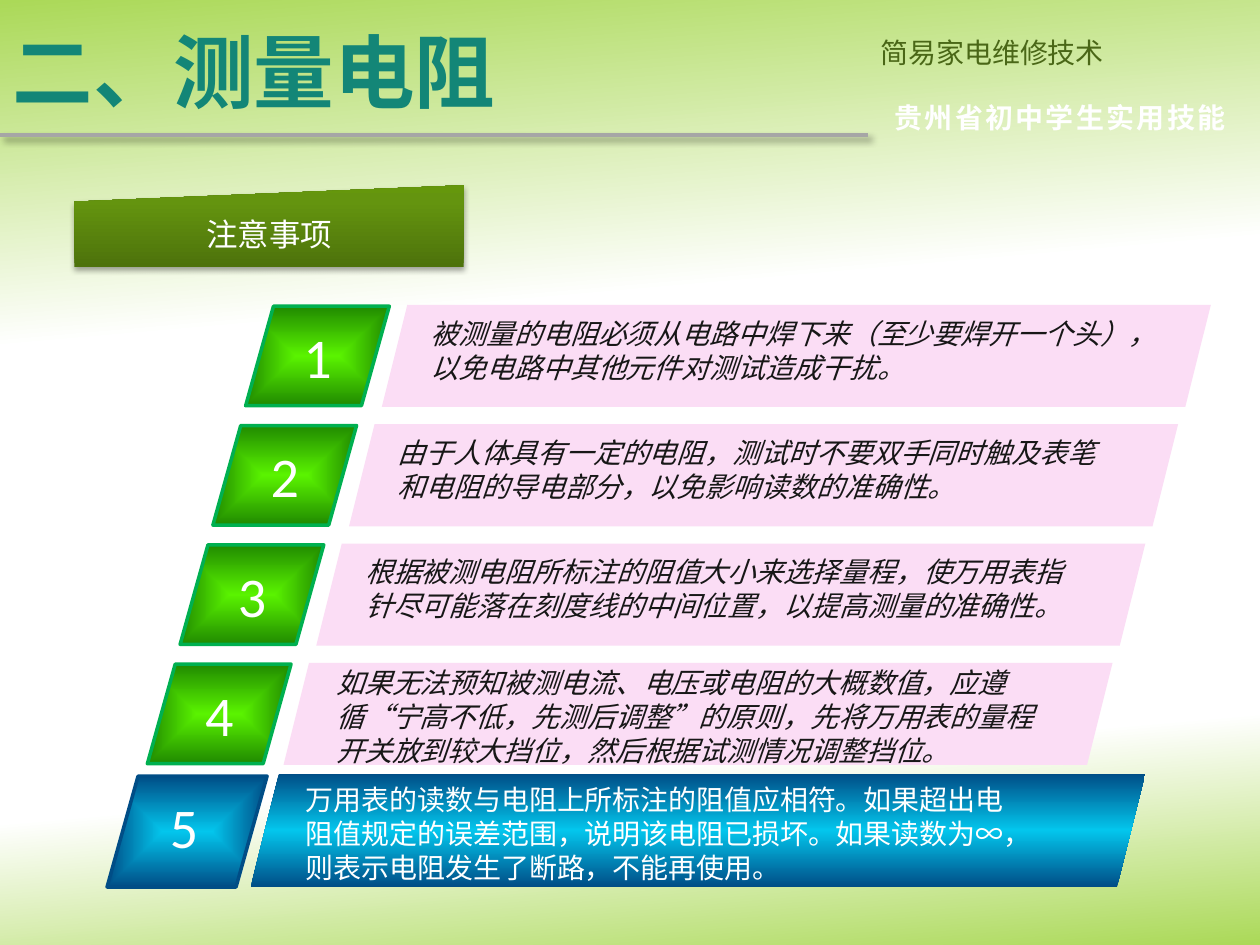
from lxml.etree import SubElement
from pptx import Presentation
from pptx.dml.color import RGBColor
from pptx.enum.shapes import MSO_CONNECTOR as Connector, MSO_SHAPE as Shape
from pptx.enum.text import MSO_ANCHOR as Anchor, PP_ALIGN as Align
from pptx.oxml.ns import qn
from pptx.util import Inches, Pt

CJK = "Noto Sans CJK SC"
GREEN = [(0, "5AF300"), (100, "208A00")]
BLUE = [(0, "03C6ED"), (100, "004D86")]
BLUE_BAND = [(0, "004D86"), (50, "03C6ED"), (100, "004D86")]
NOTES = [
    "被测量的电阻必须从电路中焊下来（至少要焊开一个头），以免电路中其他元件对测试造成干扰。",
    "由于人体具有一定的电阻，测试时不要双手同时触及表笔和电阻的导电部分，以免影响读数的准确性。",
    "根据被测电阻所标注的阻值大小来选择量程，使万用表指针尽可能落在刻度线的中间位置，以提高测量的准确性。",
    "如果无法预知被测电流、电压或电阻的大概数值，应遵循“宁高不低，先测后调整”的原则，先将万用表的量程开关放到较大挡位，然后根据试测情况调整挡位。",
]
LAST_NOTE = "万用表的读数与电阻上所标注的阻值应相符。如果超出电阻值规定的误差范围，说明该电阻已损坏。如果读数为∞，则表示电阻发生了断路，不能再使用。"


def color(value):
    return RGBColor.from_string(value)


def add_color(parent, value, alpha=100):
    node = SubElement(parent, qn("a:srgbClr"), val=value)
    if alpha < 100:
        SubElement(node, qn("a:alpha"), val=str(alpha * 1000))


def set_gradient(fill, element, stops, angle=None):
    """Linear gradient, or one that follows the outline if angle is None."""
    fill.gradient()
    gradient = element.find(".//" + qn("a:gradFill"))
    for child in list(gradient):
        gradient.remove(child)
    stop_list = SubElement(gradient, qn("a:gsLst"))
    for position, value in stops:
        add_color(SubElement(stop_list, qn("a:gs"), pos=str(position * 1000)), value)
    if angle is None:
        center = SubElement(gradient, qn("a:path"), path="shape")
        SubElement(center, qn("a:fillToRect"), l="50000", t="50000", r="50000", b="50000")
    else:
        SubElement(gradient, qn("a:lin"), ang=str(angle * 60000), scaled="0")


def add_shadow(effects, alpha, blur, distance, angle):
    shadow = SubElement(effects, qn("a:outerShdw"), blurRad=str(Pt(blur)),
                        dist=str(Pt(distance)), dir=str(angle * 60000),
                        algn="t", rotWithShape="0")
    add_color(shadow, "000000", alpha)


class SlideBuilder:
    def __init__(self, page):
        self.page = page

    def format_text(self, frame, text, size, fill, font=CJK, bold=False,
                    italic=False, align=Align.LEFT, spacing=None, tracking=0):
        frame.text = text
        para = frame.paragraphs[0]
        para.alignment = align
        if spacing:
            para.line_spacing = Pt(spacing)
        for span in para.runs:
            span.font.size, span.font.name = Pt(size), font
            span.font.bold, span.font.italic = bold, italic
            span.font.color.rgb = color(fill)
            props = span.font._element
            SubElement(props, qn("a:ea"), typeface=CJK)
            if tracking:
                props.set("spc", str(int(tracking * 100)))

    def title(self, text, left, top, width, height, size, fill):
        box = self.page.shapes.title
        box.left, box.top = Inches(left), Inches(top)
        box.width, box.height = Inches(width), Inches(height)
        box.text_frame.vertical_anchor = Anchor.MIDDLE
        self.format_text(box.text_frame, text, size, fill, bold=True)

    def text(self, text, left, top, width, height, size, fill, wrap=True,
             parent=None, **style):
        box = (parent or self.page).shapes.add_textbox(
            Inches(left), Inches(top), Inches(width), Inches(height))
        box.text_frame.word_wrap = wrap
        self.format_text(box.text_frame, text, size, fill, **style)

    def shape(self, kind, left, top, width, height, fill, angle=None,
              outline=None, parent=None):
        shape = (parent or self.page).shapes.add_shape(
            kind, Inches(left), Inches(top), Inches(width), Inches(height))
        shape.shadow.inherit = False
        if isinstance(fill, str):
            shape.fill.solid()
            shape.fill.fore_color.rgb = color(fill)
        else:
            set_gradient(shape.fill, shape.element, fill, angle)
        if outline:
            shape.line.color.rgb = color(outline)
            shape.line.width = Pt(2)
        else:
            shape.line.fill.background()
        return shape

    def badge(self, number, left, top, width, height, fill, outline, inset):
        group = self.page.shapes.add_group_shape()

        class_parent = group
        tile = self.shape(Shape.PARALLELOGRAM, left, top, width, height, fill,
                          outline=outline, parent=class_parent)
        tile.adjustments[0] = 0.28
        self.text(str(number), left + inset, top + 0.08, 0.43, 0.64, 32, "FFFFFF",
                  wrap=False, parent=class_parent, font="Calibri")

    def note(self, text, left, top, height, fill, italic):
        self.text(text, left, top, 5.91, height, 16, fill, font="Arial",
                  italic=italic, spacing=19.3)

    def rule(self, left, top, right, fill, width):
        line = self.page.shapes.add_connector(
            Connector.STRAIGHT, Inches(left), Inches(top), Inches(right), Inches(top))
        line.line.color.rgb = color(fill)
        line.line.width = Pt(width)
        effects = SubElement(line.element.spPr, qn("a:effectLst"))
        add_shadow(effects, 40, 4, 3, 45)


def main():
    deck = Presentation()
    deck.slide_width, deck.slide_height = Inches(10), Inches(7.5)
    page = deck.slides.add_slide(deck.slide_layouts[5])
    builder = SlideBuilder(page)
    set_gradient(page.background.fill, page.element,
                 [(0, "ABD958"), (33, "FFFFFF"), (52, "FFFFFF"),
                  (78, "FFFFFF"), (100, "ABD958")], 85)

    # Header
    builder.title("二、测量电阻", 0, 0.05, 6.89, 1.02, 46, "138677")
    builder.rule(0, 1.07, 6.89, "A6A6A6", 2.25)
    builder.text("简易家电维修技术", 6.89, 0.23, 3.11, 0.37, 16, "4A6717",
                 align=Align.JUSTIFY, spacing=19.3)
    builder.text("贵州省初中学生实用技能", 7, 0.75, 2.95, 0.37, 16, "FFFFFF",
                 wrap=False, bold=True, spacing=19.3, tracking=1.4)

    # Section label
    label = builder.shape(Shape.FLOWCHART_MANUAL_INPUT, 0.59, 1.47, 3.09, 0.65,
                          [(0, "4D720B"), (80, "64940F"), (100, "65970C")], 270)
    add_shadow(label.element.spPr.find(qn("a:effectLst")), 35, 3.1, 1.8, 90)
    label.text_frame.vertical_anchor = Anchor.MIDDLE
    builder.format_text(label.text_frame, "注意事项", 18, "FFFFFF", align=Align.CENTER)

    # Green rows, each one stepping down and to the left
    for index, text in enumerate(NOTES):
        left, top = 3.03 - 0.26 * index, 2.42 + 0.947 * index
        long_text = len(text) > 60
        builder.badge(index + 1, left - 1.08, top + 0.01, 1.14, 0.79,
                      GREEN, "00B050", 0.36)
        builder.shape(Shape.PARALLELOGRAM, left, top, 6.58, 0.81, "FBDDF5")
        builder.note(text, left + (0.32 if long_text else 0.29),
                     top + (-0.03 if long_text else 0.04),
                     0.91 if long_text else 0.64, "171717", True)

    # Blue closing row
    builder.badge(5, 0.85, 6.16, 1.27, 0.88, BLUE, "004D86", 0.4)
    builder.shape(Shape.PARALLELOGRAM, 1.99, 6.14, 7.1, 0.9, BLUE_BAND, 270)
    builder.note(LAST_NOTE, 2.33, 6.16, 0.91, "FFFFFF", False)

    deck.save("out.pptx")


if __name__ == "__main__":
    main()
